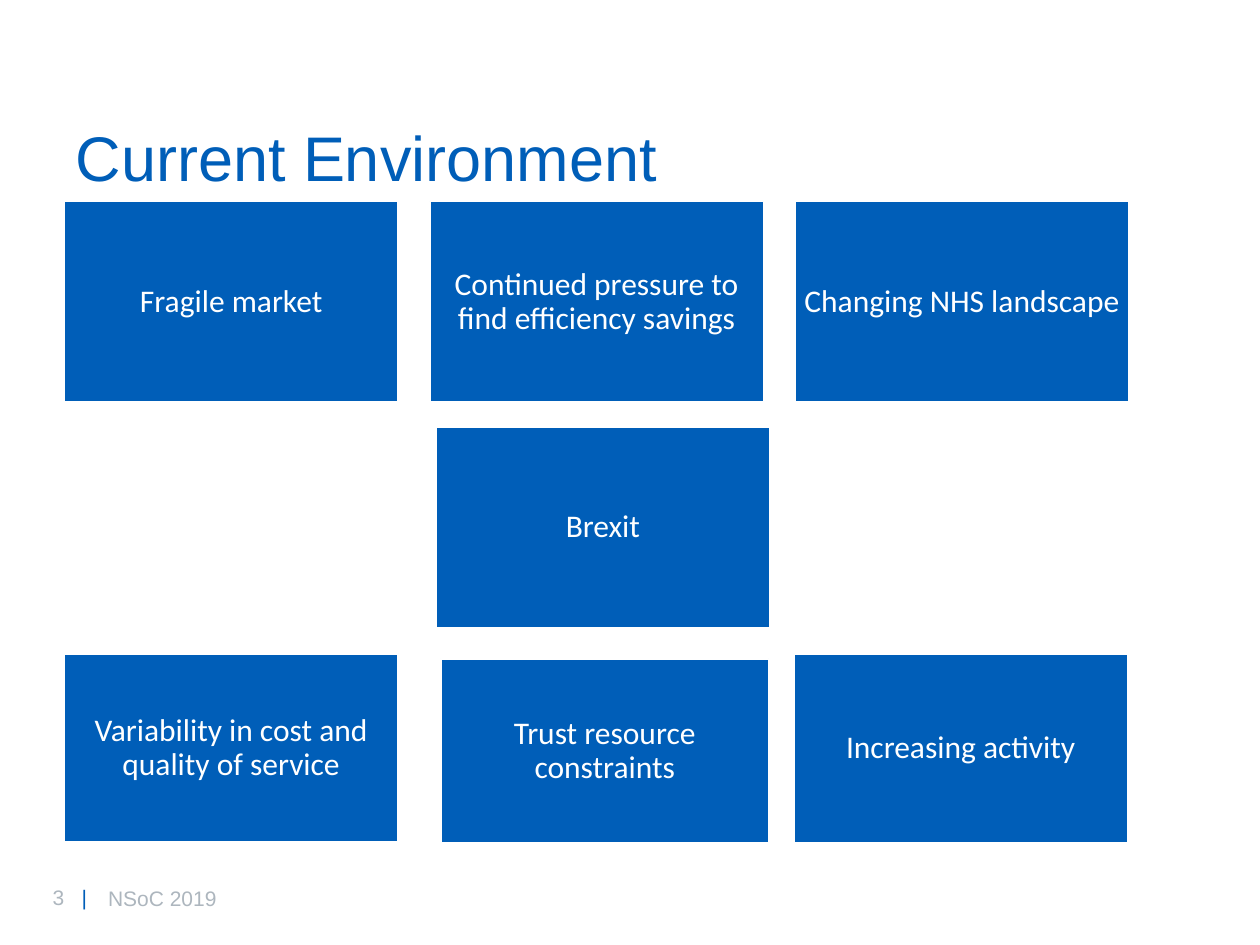
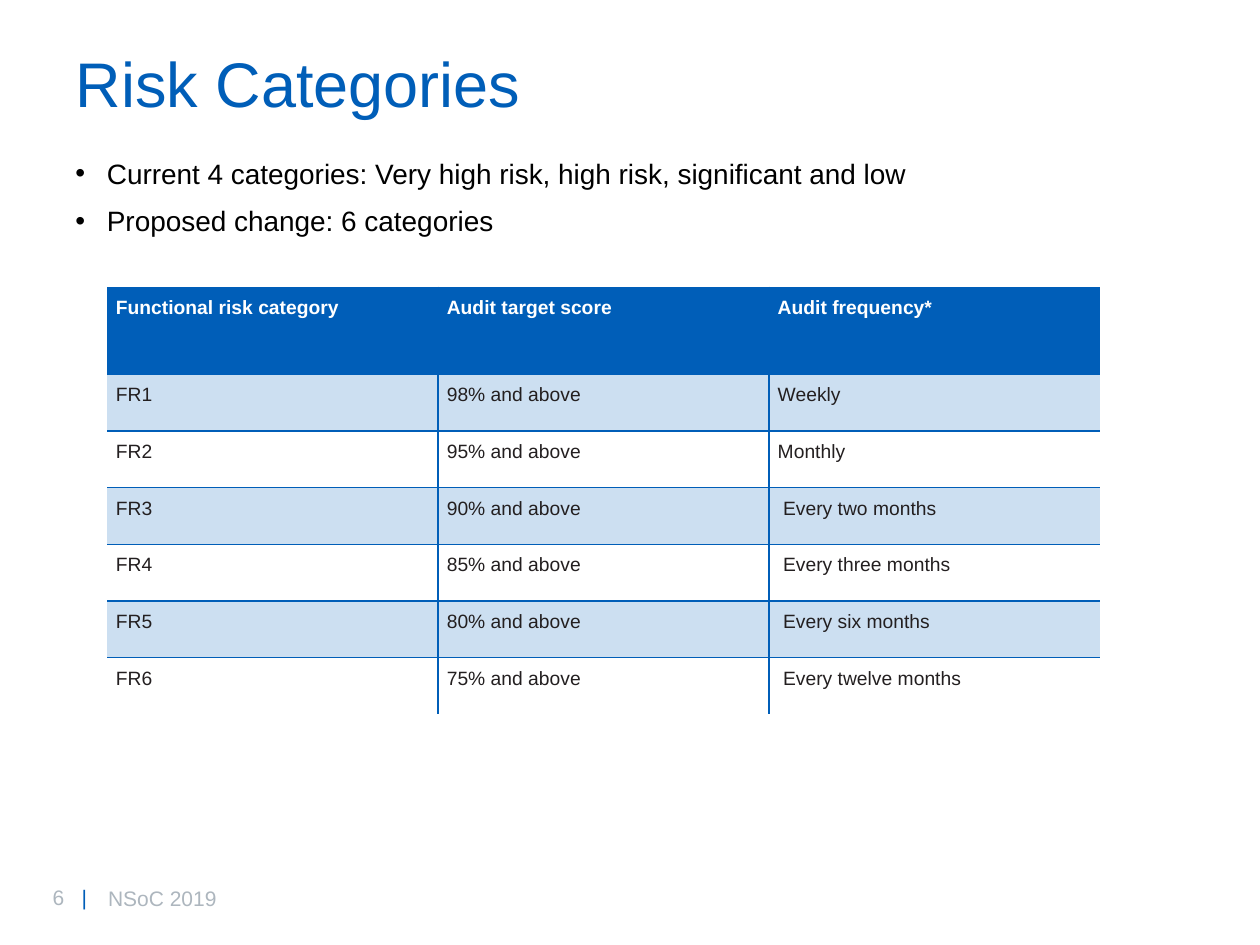
import lxml.etree
import pptx
import pptx.dml.color
import pptx.enum.shapes
import pptx.enum.text
import pptx.oxml.ns
import pptx.util

BLUE = pptx.dml.color.RGBColor(0x00, 0x5E, 0xB8)
PALE_BLUE = pptx.dml.color.RGBColor(0xCC, 0xDF, 0xF1)
GREY = pptx.dml.color.RGBColor(0xAD, 0xB6, 0xBE)
INK = pptx.dml.color.RGBColor(0x23, 0x1F, 0x20)
BLACK = pptx.dml.color.RGBColor(0x00, 0x00, 0x00)
WHITE = pptx.dml.color.RGBColor(0xFF, 0xFF, 0xFF)

ALIGN = pptx.enum.text.PP_ALIGN
ANCHOR = pptx.enum.text.MSO_ANCHOR
COLUMNS, ROWS = 100, 75

ENVIRONMENT = [
    ("Fragile market", 5.1, 16, 26.5, 15.9),
    ("Continued pressure to find efficiency savings", 34.1, 16, 26.5, 15.9),
    ("Changing NHS landscape", 63.1, 16, 26.5, 15.9),
    ("Brexit", 34.6, 33.9, 26.5, 15.9),
    ("Variability in cost and quality of service", 5.1, 51.9, 26.5, 14.9),
    ("Trust resource constraints", 35, 52.3, 26, 14.6),
    ("Increasing activity", 63, 51.9, 26.5, 15),
]
RISKS = [
    ("Functional risk category", "Audit target score", "Audit frequency*"),
    ("FR1", "98% and above", "Weekly"),
    ("FR2", "95% and above", "Monthly"),
    ("FR3", "90% and above", " Every two months"),
    ("FR4", "85% and above", " Every three months"),
    ("FR5", "80% and above", " Every six months"),
    ("FR6", "75% and above", " Every twelve months"),
]


def add_element(parent, tag, **attributes):
    return lxml.etree.SubElement(parent, pptx.oxml.ns.qn(tag), attributes)


class BriefingDeck:
    """Build briefing pages on a 100 by 75 grid in one shared style."""

    def __init__(self):
        self.deck = pptx.Presentation()
        self.deck.slide_width = pptx.util.Inches(10)
        self.deck.slide_height = pptx.util.Inches(7.5)
        self.page = None

    def across(self, columns):
        return round(self.deck.slide_width * columns / COLUMNS)

    def down(self, rows):
        return round(self.deck.slide_height * rows / ROWS)

    def area(self, left, top, width, height):
        return self.across(left), self.down(top), self.across(width), self.down(height)

    def style(self, para, size, colour, font="Arial", bold=False):
        for span in para.runs:
            span.font.name = font
            span.font.size = pptx.util.Pt(size)
            span.font.bold = bold
            span.font.color.rgb = colour

    def start_page(self, title, top, number):
        self.page = self.deck.slides.add_slide(self.deck.slide_layouts[5])
        box = self.page.shapes.title
        box.left, box.top, box.width, box.height = self.area(5, top, 71.8, 6.7)
        frame = box.text_frame
        frame.text = title
        frame.auto_size = pptx.enum.text.MSO_AUTO_SIZE.NONE
        frame.vertical_anchor = ANCHOR.BOTTOM
        para = frame.paragraphs[0]
        para.alignment = ALIGN.LEFT
        para.line_spacing = 0.9
        self.style(para, 36, BLUE)
        self.footer(number)

    def text_box(self, text, area, size, colour, anchor=ANCHOR.TOP):
        frame = self.page.shapes.add_textbox(*self.area(*area)).text_frame
        frame.word_wrap = True
        frame.vertical_anchor = anchor
        frame.text = text
        for para in frame.paragraphs:
            self.style(para, size, colour)
        return frame

    def footer(self, number):
        para = self.text_box(f"{number}\t", (3.2, 69.7, 7.1, 3), 12, GREY).paragraphs[0]
        tabs = add_element(para._p.get_or_add_pPr(), "a:tabLst")
        add_element(tabs, "a:tab", pos=str(self.across(2.3)), algn="l")
        bar = para.add_run()
        bar.text = "|"
        self.style(para, 12, GREY)
        bar.font.color.rgb = BLUE
        self.text_box("NSoC 2019", (7.6, 69.3, 62.6, 4), 12, GREY, ANCHOR.MIDDLE)

    def tile(self, text, *area):
        box = self.page.shapes.add_shape(
            pptx.enum.shapes.MSO_SHAPE.RECTANGLE, *self.area(*area))
        box.shadow.inherit = False
        box.fill.solid()
        box.fill.fore_color.rgb = BLUE
        box.line.color.rgb = WHITE
        box.line.width = pptx.util.Pt(1)
        frame = box.text_frame
        frame.word_wrap = True
        frame.vertical_anchor = ANCHOR.MIDDLE
        frame.margin_left = frame.margin_right = self.across(0.7)
        frame.margin_top = frame.margin_bottom = self.down(0.7)
        frame.text = text
        para = frame.paragraphs[0]
        para.alignment = ALIGN.CENTER
        para.line_spacing = 0.9
        self.style(para, 18, WHITE, "Calibri")

    def bullets(self, lines, *area):
        frame = self.text_box("\n".join(lines), area, 16, BLACK)
        for index, para in enumerate(frame.paragraphs):
            indent = self.across(2.5)
            properties = para._p.get_or_add_pPr()
            properties.set("marL", str(indent))
            properties.set("indent", str(-indent))
            add_element(properties, "a:buFont", typeface="Arial")
            add_element(properties, "a:buChar", char="•")
            para.line_spacing = 0.9
            if index:
                para.space_before = pptx.util.Pt(10)

    def border(self, cell, drawn_sides):
        properties = cell._tc.get_or_add_tcPr()
        for side in "LRTB":
            line = add_element(properties, f"a:ln{side}", w=str(pptx.util.Pt(1)))
            if side in drawn_sides:
                fill = add_element(line, "a:solidFill")
                add_element(fill, "a:srgbClr", val=str(BLUE))
            else:
                add_element(line, "a:noFill")

    def table(self, records, left, top, width, header_height, row_height):
        row_count, column_count = len(records), len(records[0])
        height = header_height + row_height * (row_count - 1)
        table = self.page.shapes.add_table(
            row_count, column_count, *self.area(left, top, width, height)).table
        table.first_row = table.horz_banding = False
        for row_index, record in enumerate(records):
            header = row_index == 0
            table.rows[row_index].height = self.down(header_height if header else row_height)
            for column_index, text in enumerate(record):
                cell = table.cell(row_index, column_index)
                sides = "T"
                sides += "L" if column_index else ""
                sides += "R" if column_index < column_count - 1 else ""
                sides += "B" if row_index < row_count - 1 else ""
                self.border(cell, sides)
                if header or row_index % 2:
                    cell.fill.solid()
                    cell.fill.fore_color.rgb = BLUE if header else PALE_BLUE
                else:
                    cell.fill.background()
                cell.margin_left = cell.margin_right = self.across(0.7)
                cell.margin_top = cell.margin_bottom = self.down(0.8)
                cell.text_frame.text = text
                self.style(cell.text_frame.paragraphs[0], 11,
                           WHITE if header else INK, bold=header)


def main():
    briefing = BriefingDeck()

    briefing.start_page("Current Environment", 9.3, 3)
    for factor in ENVIRONMENT:
        briefing.tile(*factor)

    briefing.start_page("Risk Categories", 3.4, 6)
    briefing.bullets([
        "Current 4 categories: Very high risk, high risk, significant and low",
        "Proposed change: 6 categories",
    ], 5, 12.2, 89.1, 46.8)
    briefing.table(RISKS, 8.5, 22.8, 78.8, 6.9, 4.5)

    briefing.deck.save("out.pptx")


if __name__ == "__main__":
    main()
